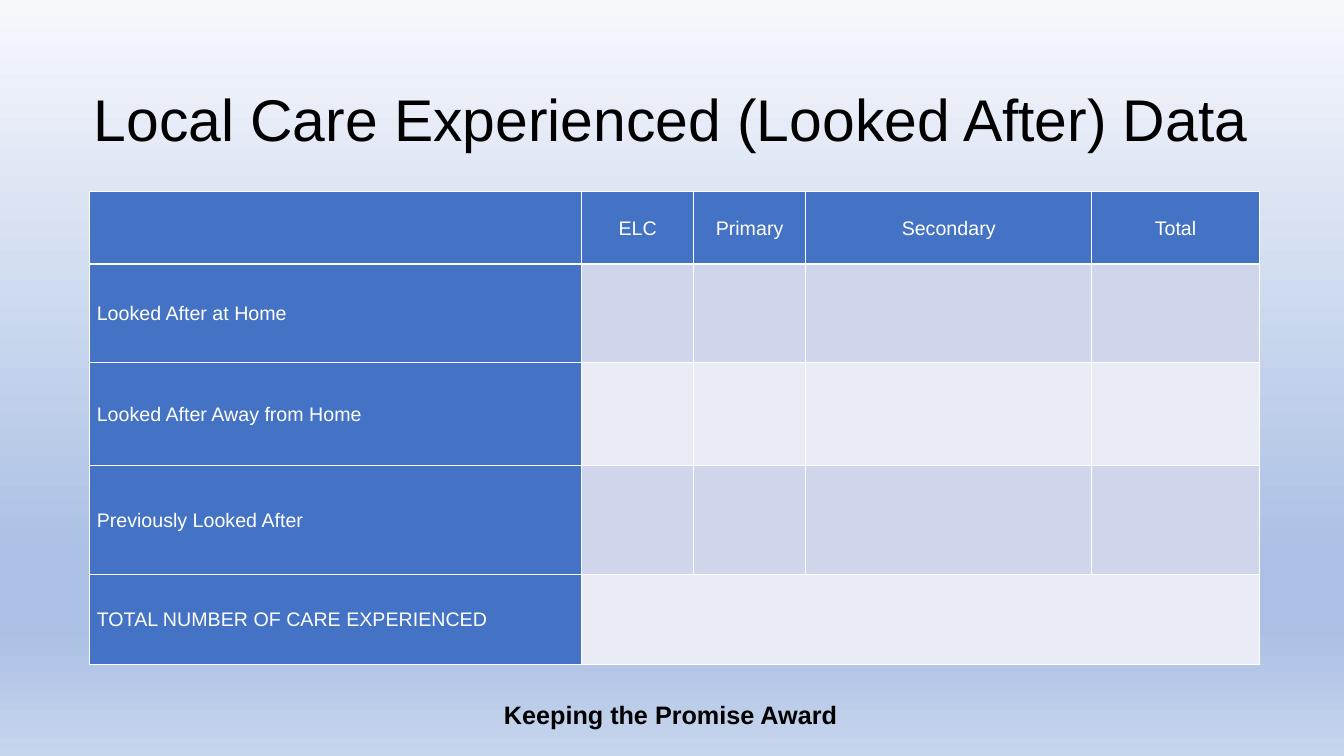
from dataclasses import dataclass

from lxml import etree
from pptx import Presentation
from pptx import util as u
from pptx.dml import color
from pptx.enum import text
from pptx.oxml import ns

FONT = "Arial"
BLACK, WHITE, BLUE = "000000", "FFFFFF", "4472C4"
BANDS = ("CFD5EA", "E9EBF5")
HEADINGS = ("", "ELC", "Primary", "Secondary", "Total")
COLUMN_WIDTHS = (4.88, 1.11, 1.11, 2.84, 1.66)


@dataclass
class TableRow:
    labels: tuple[str, ...]
    height: float
    fill: str


@dataclass
class Label:
    wording: str
    place: tuple[float, float, float, float]
    size: float
    bold: bool
    wrap: bool
    anchor: text.MSO_ANCHOR


ROWS = [TableRow(HEADINGS, 0.72, BLUE)] + [
    TableRow((wording,), height, BANDS[index % 2])
    for index, (wording, height) in enumerate([
        ("Looked After at Home", 0.98),
        ("Looked After Away from Home", 1.02),
        ("Previously Looked After", 1.08),
        ("TOTAL NUMBER OF CARE EXPERIENCED", 0.89),
    ])
]
LABELS = [
    Label("Keeping the Promise Award", (4.9, 6.89, 3.54, 0.4), 18, True, False,
          text.MSO_ANCHOR.TOP),
    Label("Local Care Experienced (Looked After) Data", (0.83, 0.76, 11.71, 0.81),
          42, False, True, text.MSO_ANCHOR.BOTTOM),
]


def rgb(value: str) -> color.RGBColor:
    return color.RGBColor.from_string(value)


def write(frame, wording: str, *, size: float, ink: str, bold: bool = False,
          align=text.PP_ALIGN.LEFT) -> None:
    para = frame.paragraphs[0]
    para.alignment = align
    span = para.add_run()
    span.text = wording
    span.font.name, span.font.size, span.font.bold = FONT, u.Pt(size), bold
    span.font.color.rgb = rgb(ink)


def add_element(parent, tag: str, **attributes: str):
    return etree.SubElement(parent, ns.qn(tag), attributes)


def paint_background(page) -> None:
    fill = page.background.fill
    fill.gradient()
    fill.gradient_angle = 270
    stops = page.element.find(".//" + ns.qn("a:gsLst"))
    for stop in list(stops):
        stops.remove(stop)
    for percent, value in ((0, "F6F8FC"), (74, "ABC0E4"), (83, "ABC0E4"), (100, "C7D5ED")):
        stop = add_element(stops, "a:gs", pos=str(percent * 1000))
        add_element(stop, "a:srgbClr", val=value)


def add_label(page, label: Label) -> None:
    box = page.shapes.add_textbox(*map(u.Inches, label.place))
    frame = box.text_frame
    frame.word_wrap = label.wrap
    frame.vertical_anchor = label.anchor
    write(frame, label.wording, size=label.size, ink=BLACK, bold=label.bold)


def style_cell(cell, fill: str) -> None:
    # Borders come before the fill in the cell properties
    properties = cell._tc.get_or_add_tcPr()
    for side in "LRTB":
        line = add_element(properties, f"a:ln{side}", w=str(u.Pt(1)))
        add_element(add_element(line, "a:solidFill"), "a:srgbClr", val=WHITE)
    cell.fill.solid()
    cell.fill.fore_color.rgb = rgb(fill)
    cell.vertical_anchor = text.MSO_ANCHOR.MIDDLE
    cell.margin_left = cell.margin_right = u.Inches(0.07)
    cell.margin_top, cell.margin_bottom = u.Inches(0.01), 0


def add_data_table(page) -> None:
    frame = page.shapes.add_table(
        len(ROWS), len(COLUMN_WIDTHS), u.Inches(0.89), u.Inches(1.9),
        u.Inches(sum(COLUMN_WIDTHS)), u.Inches(sum(row.height for row in ROWS)))
    table = frame.table
    for column, width in zip(table.columns, COLUMN_WIDTHS):
        column.width = u.Inches(width)
    for r, row in enumerate(ROWS):
        table.rows[r].height = u.Inches(row.height)
        for c in range(len(COLUMN_WIDTHS)):
            style_cell(table.cell(r, c), BLUE if c == 0 else row.fill)
        for c, wording in enumerate(row.labels):
            if wording:
                align = text.PP_ALIGN.CENTER if r == 0 else text.PP_ALIGN.LEFT
                write(table.cell(r, c).text_frame, wording, size=14, ink=WHITE, align=align)
    # One overall total spans the last row
    last = len(ROWS) - 1
    table.cell(last, 1).merge(table.cell(last, len(COLUMN_WIDTHS) - 1))


def main() -> None:
    deck = Presentation()
    deck.slide_width, deck.slide_height = u.Inches(13.33), u.Inches(7.5)
    page = deck.slides.add_slide(deck.slide_layouts[6])
    paint_background(page)
    for label in LABELS:
        add_label(page, label)
    add_data_table(page)
    deck.save("out.pptx")


if __name__ == "__main__":
    main()
